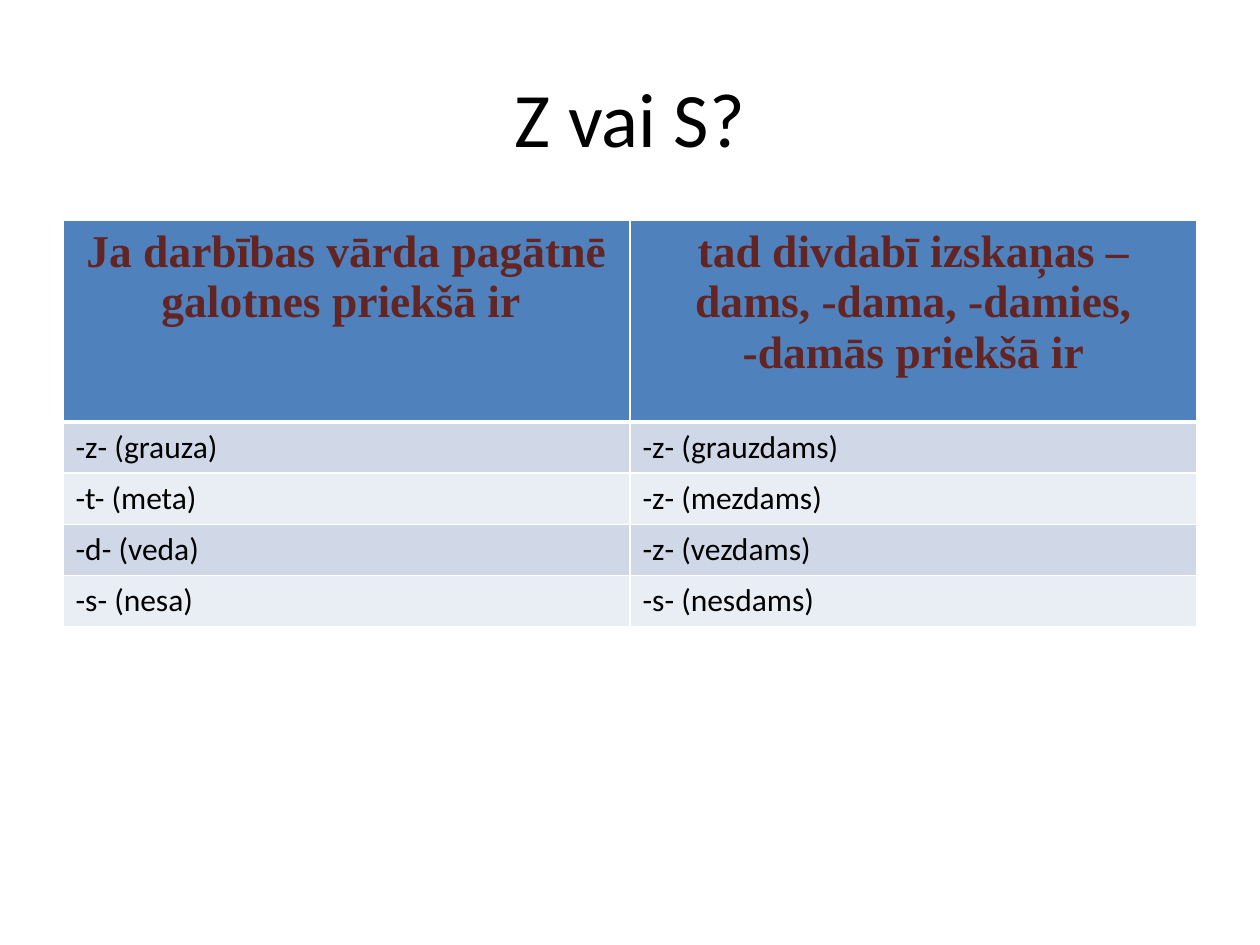
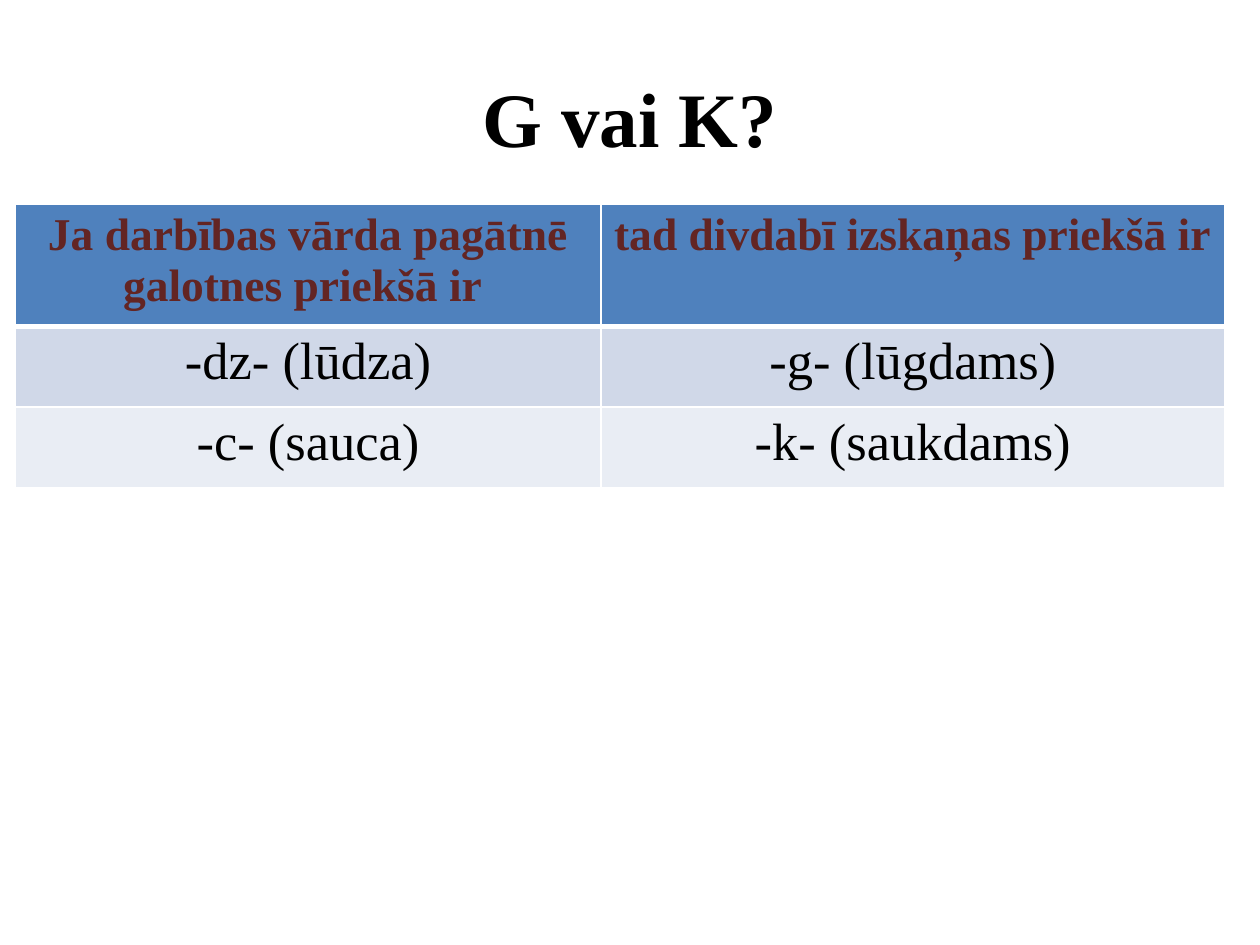
from lxml import etree
from pptx import Presentation
from pptx import util as u
from pptx.dml.color import RGBColor
from pptx.enum import text
from pptx.oxml.ns import qn

COLORS = {
    "black": "000000",
    "white": "FFFFFF",
    "header": "4F81BD",
    "header_text": "632523",
    "band_dark": "D0D8E8",
    "band_light": "E9EDF4",
}
SANS, SERIF = "Calibri", "Times New Roman"
GRID_COLS, GRID_ROWS = 100, 75
VERB_HEADER = "Ja darbības vārda pagātnē galotnes priekšā ir "


def rgb(name):
    return RGBColor.from_string(COLORS[name])


def write(tf, words, size=18, font=SANS, color="black", bold=False, center=False):
    p = tf.paragraphs[0]
    p.alignment = text.PP_ALIGN.CENTER if center else text.PP_ALIGN.LEFT
    r = p.add_run()
    r.text = words
    r.font.size = u.Pt(size)
    r.font.name = font
    r.font.bold = bold
    r.font.color.rgb = rgb(color)


class Deck:
    def __init__(self):
        self.prs = Presentation()
        self.prs.slide_width = u.Inches(10)
        self.prs.slide_height = u.Inches(7.5)
        self.s = None

    def x(self, cols):
        return round(self.prs.slide_width * cols / GRID_COLS)

    def y(self, rows):
        return round(self.prs.slide_height * rows / GRID_ROWS)

    def slide(self, title, **style):
        self.s = self.prs.slides.add_slide(self.prs.slide_layouts[5])
        self.s.background.fill.solid()
        self.s.background.fill.fore_color.rgb = rgb("white")
        sp = self.s.shapes.title
        sp.left, sp.top = self.x(5), self.y(3)
        sp.width, sp.height = self.x(90), self.y(12.5)
        tf = sp.text_frame
        tf.vertical_anchor = text.MSO_ANCHOR.MIDDLE
        write(tf, title, size=44, center=True, **style)

    def borders(self, cell, **widths):
        tc_pr = cell._tc.get_or_add_tcPr()
        for side in "LRTB":
            ln = etree.SubElement(tc_pr, qn(f"a:ln{side}"), w=str(u.Pt(widths.get(side, 1))))
            fill = etree.SubElement(ln, qn("a:solidFill"))
            etree.SubElement(fill, qn("a:srgbClr"), val=COLORS["white"])

    def table(self, left, top, widths, heights, rows, **body):
        frame = self.s.shapes.add_table(
            len(rows), len(widths), self.x(left), self.y(top),
            self.x(sum(widths)), self.y(sum(heights)))
        tbl = frame.table
        for col, width in zip(tbl.columns, widths):
            col.width = self.x(width)
        for row, height in zip(tbl.rows, heights):
            row.height = self.y(height)
        header = dict(size=26, font=SERIF, color="header_text", bold=True, center=True)
        rules = {0: {"B": 3}, 1: {"T": 3}}
        for i, row in enumerate(rows):
            band = "band_dark" if i % 2 else "band_light"
            for j, words in enumerate(row):
                cell = tbl.cell(i, j)
                self.borders(cell, **rules.get(i, {}))
                cell.fill.solid()
                cell.fill.fore_color.rgb = rgb(band if i else "header")
                write(cell.text_frame, words, **(body if i else header))


def main():
    deck = Deck()

    deck.slide("Z vai S?")
    deck.table(5, 17.5, [45, 45], [16] + [4.05] * 4, [
        (VERB_HEADER, "tad divdabī izskaņas –dams, -dama, -damies, -damās priekšā ir"),
        ("-z- (grauza)", "-z- (grauzdams)"),
        ("-t- (meta)", "-z- (mezdams)"),
        ("-d- (veda)", "-z- (vezdams)"),
        ("-s- (nesa)", "-s- (nesdams)"),
    ])

    deck.slide("G vai K?", font=SERIF, bold=True)
    deck.table(1.2, 16.2, [46.5, 49.5], [9.7, 6.4, 6.4], [
        (VERB_HEADER, "tad divdabī izskaņas priekšā ir"),
        ("-dz- (lūdza)", "-g- (lūgdams)"),
        ("-c- (sauca)", "-k- (saukdams)"),
    ], size=30, font=SERIF, center=True)

    deck.prs.save("out.pptx")


if __name__ == "__main__":
    main()
